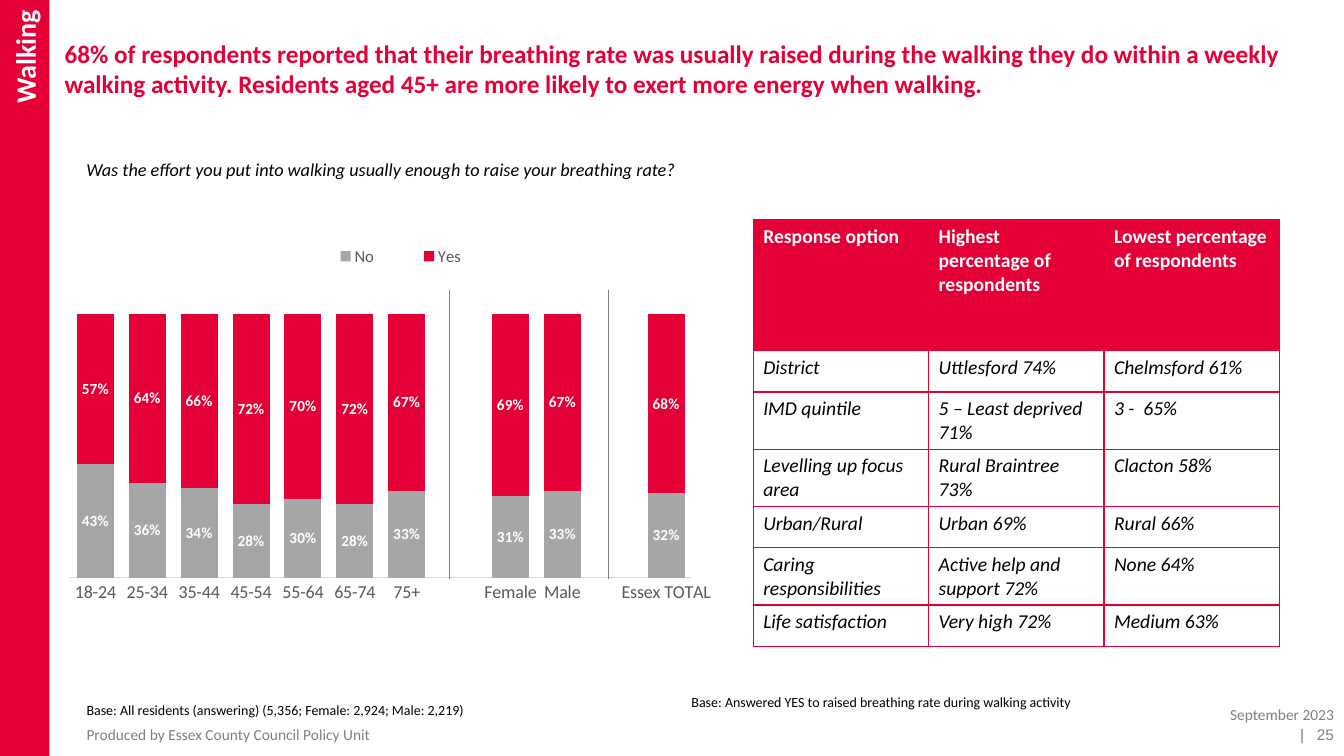
from lxml.etree import SubElement
from pptx import Presentation
from pptx.chart.data import CategoryChartData
from pptx.dml.color import RGBColor
from pptx.enum.chart import XL_CHART_TYPE, XL_LEGEND_POSITION, XL_TICK_MARK
from pptx.enum.shapes import MSO_CONNECTOR, MSO_SHAPE
from pptx.enum.text import MSO_ANCHOR, PP_ALIGN
from pptx.oxml import parse_xml
from pptx.oxml.ns import nsdecls, qn
from pptx.util import Inches, Pt

RED, WHITE, BLACK = "E40037", "FFFFFF", "000000"
FOOTER_GREY, AXIS_GREY, BAR_GREY = "808080", "595959", "A6A6A6"

AGES = ["18-24", "25-34", "35-44", "45-54", "55-64", "65-74", "75+"]
GROUPS = AGES + ["", "Female", "Male", "", "Essex TOTAL"]
NO = [0.43, 0.36, 0.34, 0.28, 0.3, 0.28, 0.33, None, 0.31, 0.33, None, 0.32]
YES = [None if share is None else round(1 - share, 2) for share in NO]

RESPONSES = [
    ("Response option", "Highest percentage of respondents",
     "Lowest percentage of respondents"),
    ("District", "Uttlesford 74%", "Chelmsford 61%"),
    ("IMD quintile", "5 – Least deprived 71%", "3 -  65%"),
    ("Levelling up focus area", "Rural Braintree 73%", "Clacton 58%"),
    ("Urban/Rural", "Urban 69%", "Rural 66%"),
    ("Caring responsibilities", "Active help and support 72%", "None 64%"),
    ("Life satisfaction", "Very high 72%", "Medium 63%"),
]


def rgb(hex_colour):
    return RGBColor.from_string(hex_colour)


def box(left, top, width, height):
    return Inches(left), Inches(top), Inches(width), Inches(height)


def style_font(font, size, colour, bold=False, italic=False, name="Calibri"):
    font.name, font.size = name, Pt(size)
    font.bold, font.italic = bold, italic
    font.color.rgb = rgb(colour)


def add_text(slide, place, text, size, colour, align=PP_ALIGN.LEFT,
             anchor=MSO_ANCHOR.TOP, inset=None, **font_style):
    frame = slide.shapes.add_textbox(*box(*place)).text_frame
    frame.word_wrap = True
    frame.vertical_anchor = anchor
    if inset is not None:
        frame.margin_left = frame.margin_right = Inches(inset)
        frame.margin_top = frame.margin_bottom = Inches(inset)
    paragraph = frame.paragraphs[0]
    paragraph.text = text
    paragraph.alignment = align
    style_font(paragraph.font, size, colour, **font_style)


def add_section_band(slide, label):
    band = slide.shapes.add_shape(MSO_SHAPE.RECTANGLE, *box(0, 0, 0.49, 7.5))
    band.shadow.inherit = False
    band.fill.solid()
    band.fill.fore_color.rgb = rgb(RED)
    band.line.fill.background()
    frame = band.text_frame
    frame.margin_left = frame.margin_top = frame.margin_right = Inches(0.1)
    frame.margin_bottom = Inches(0.05)
    frame.vertical_anchor = MSO_ANCHOR.MIDDLE
    frame._txBody.bodyPr.set("vert", "vert270")
    paragraph = frame.paragraphs[0]
    paragraph.text = label
    paragraph.alignment = PP_ALIGN.RIGHT
    style_font(paragraph.font, 20, WHITE, bold=True)


def manual_layout(x, y, w, h, inner=False):
    target = '<c:layoutTarget val="inner"/>' if inner else ""
    return parse_xml(
        f'<c:layout {nsdecls("c")}><c:manualLayout>{target}'
        '<c:xMode val="edge"/><c:yMode val="edge"/>'
        f'<c:x val="{x}"/><c:y val="{y}"/><c:w val="{w}"/><c:h val="{h}"/>'
        '</c:manualLayout></c:layout>')


def add_breathing_chart(slide):
    data = CategoryChartData(number_format="0%")
    data.categories = GROUPS
    data.add_series("No", NO)
    data.add_series("Yes", YES)
    chart = slide.shapes.add_chart(
        XL_CHART_TYPE.COLUMN_STACKED, *box(0.67, 2.07, 6.38, 4.5), data).chart
    style_font(chart.font, 10, BLACK)
    chart.has_title = False

    # Stacked bars and their labels
    plot = chart.plots[0]
    plot.gap_width, plot.overlap = 40, 100
    plot.vary_by_categories = False
    for series, colour in zip(plot.series, (BAR_GREY, RED)):
        series.format.fill.solid()
        series.format.fill.fore_color.rgb = rgb(colour)
        labels = series.data_labels
        labels.show_value = True
        labels.number_format, labels.number_format_is_linked = "0%", False
        style_font(labels.font, 11, WHITE, bold=True)

    # Axes
    shares = chart.value_axis
    shares.minimum_scale, shares.maximum_scale = 0, 1.2
    shares.has_major_gridlines = False
    shares.visible = False
    groups = chart.category_axis
    groups.major_tick_mark = groups.minor_tick_mark = XL_TICK_MARK.NONE
    groups.format.line.color.rgb = rgb("D9D9D9")
    groups.format.line.width = Pt(0.75)
    style_font(groups.tick_labels.font, 13, AXIS_GREY)
    label_body = groups._element.find(qn("c:txPr")).find(qn("a:bodyPr"))
    label_body.set("rot", "-60000000")
    label_body.set("vert", "horz")

    # Legend and plot placement
    chart.has_legend = True
    legend = chart.legend
    legend.position = XL_LEGEND_POSITION.TOP
    legend.include_in_layout = False
    style_font(legend.font, 12, AXIS_GREY)
    legend._element.find(qn("c:legendPos")).addnext(
        manual_layout(0.36, 0.07, 0.33, 0.07))
    plot_area = chart._chartSpace.chart.plotArea
    for layout in plot_area.findall(qn("c:layout")):
        plot_area.remove(layout)
    plot_area.insert(0, manual_layout(0.003, 0.117, 0.981, 0.697, inner=True))


def add_group_divider(slide, x):
    divider = slide.shapes.add_connector(
        MSO_CONNECTOR.STRAIGHT, Inches(x), Inches(5.74), Inches(x), Inches(2.88))
    divider.line.color.rgb = rgb("7F7F7F")
    divider.line.width = Pt(0.5)
    SubElement(divider._element.spPr, qn("a:effectLst"))


def add_borders(cell, colour, width):
    properties = cell._tc.get_or_add_tcPr()
    for position, side in enumerate(("lnL", "lnR", "lnT", "lnB")):
        properties.insert(position, parse_xml(
            f'<a:{side} {nsdecls("a")} w="{Pt(width)}"><a:solidFill>'
            f'<a:srgbClr val="{colour}"/></a:solidFill></a:{side}>'))


def add_response_table(slide):
    table = slide.shapes.add_table(
        len(RESPONSES), 3, *box(7.47, 2.18, 5.22, 3.76)).table
    table.horz_banding = False
    for column in table.columns:
        column.width = Inches(1.74)
    for r, (row, texts) in enumerate(zip(table.rows, RESPONSES)):
        header = r == 0
        row.height = Inches(1.3 if header else 0.41)
        for cell, text in zip(row.cells, texts):
            cell.text = text
            style_font(cell.text_frame.paragraphs[0].font, 14,
                       WHITE if header else BLACK,
                       bold=header, italic=not header)
            if header:
                cell.fill.solid()
                cell.fill.fore_color.rgb = rgb(RED)
            else:
                cell.fill.background()
            add_borders(cell, RED, 1)


def main():
    deck = Presentation()
    deck.slide_width, deck.slide_height = Inches(13.33), Inches(7.5)
    slide = deck.slides.add_slide(deck.slide_layouts[6])

    # Heading, section band and question
    add_text(slide, (0.64, 0.38, 12.32, 1.16),
             "68% of respondents reported that their breathing rate was usually "
             "raised during the walking they do within a weekly walking activity. "
             "Residents aged 45+ are more likely to exert more energy when walking.",
             18, RED, inset=0, bold=True)
    add_section_band(slide, "Walking")
    add_text(slide, (0.76, 1.52, 8.63, 0.32),
             "Was the effort you put into walking usually enough to raise your "
             "breathing rate?", 13, BLACK, italic=True)

    # Results
    add_breathing_chart(slide)
    for x in (4.46, 6.03):
        add_group_divider(slide, x)
    add_response_table(slide)

    # Base notes
    add_text(slide, (0.76, 6.91, 6.38, 0.27),
             "Base: All residents (answering) (5,356; Female: 2,924; Male: 2,219)",
             10, BLACK)
    add_text(slide, (6.76, 6.83, 6.38, 0.27),
             "Base: Answered YES to raised breathing rate during walking activity",
             10, BLACK)

    # Footer
    middle, right = MSO_ANCHOR.MIDDLE, PP_ALIGN.RIGHT
    add_text(slide, (0.76, 7.21, 6.45, 0.15),
             "Produced by Essex County Council Policy Unit",
             11, FOOTER_GREY, anchor=middle)
    add_text(slide, (10.93, 7.01, 2.4, 0.15), "September 2023",
             11, FOOTER_GREY, right, middle)
    add_text(slide, (12.48, 7.21, 0.85, 0.15), "|   25",
             11, FOOTER_GREY, right, middle, name="Arial")

    deck.save("out.pptx")


if __name__ == "__main__":
    main()
